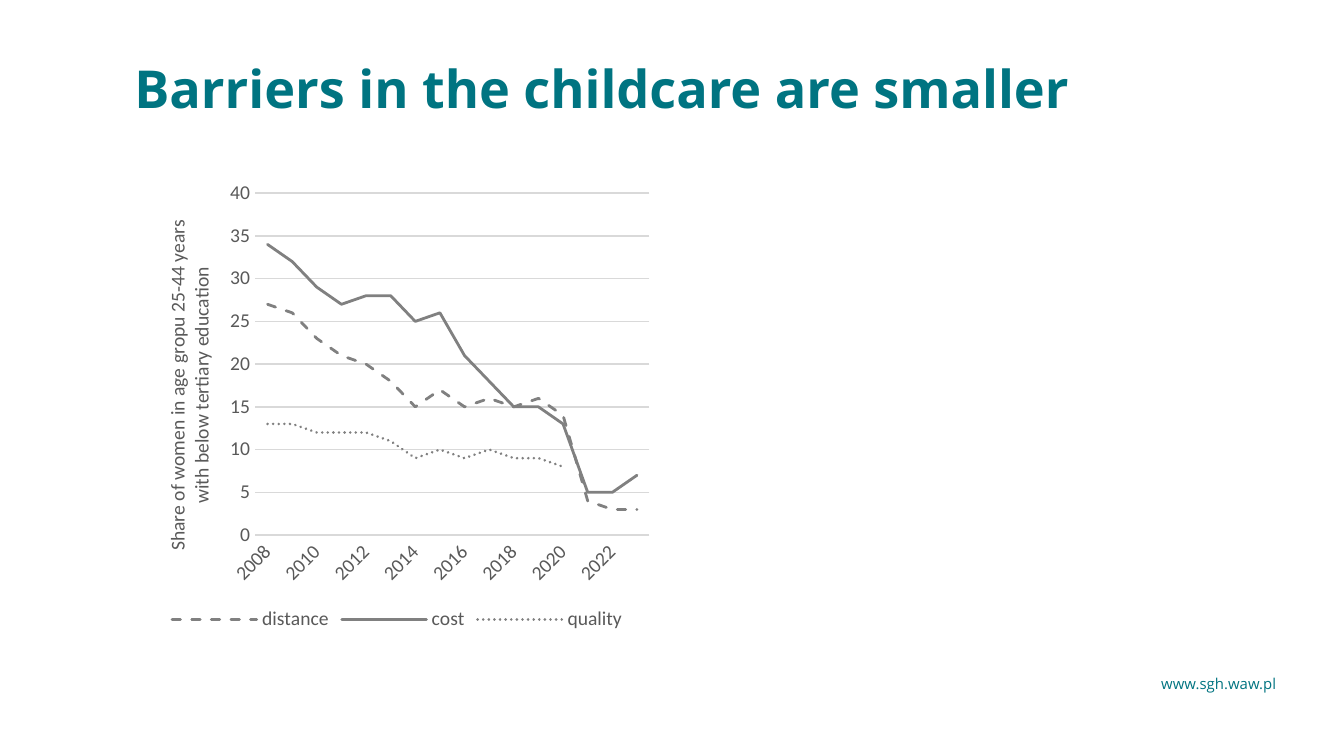
from lxml import etree
from pptx import Presentation
from pptx import util as u
from pptx.chart import data
from pptx.dml import color
from pptx.enum import chart as charts, dml
from pptx.oxml import ns

COLORS = {"teal": "007481", "label": "595959", "grid": "D9D9D9", "series": "808080"}


def rgb(name):
    return color.RGBColor.from_string(COLORS[name])


def format_font(font, face, size, shade, bold=False):
    font.name = face
    font.size = u.Pt(size)
    font.bold = bold
    font.color.rgb = rgb(shade)


def write(frame, words, face="Open Sans", size=8, shade="teal", bold=False):
    frame.text = words
    format_font(frame.paragraphs[0].runs[0].font, face, size, shade, bold)


def place(parent, before, target=None, **fractions):
    for old in parent.findall(ns.qn("c:layout")):
        parent.remove(old)
    layout = etree.Element(ns.qn("c:layout"))
    manual = etree.SubElement(layout, ns.qn("c:manualLayout"))
    settings = {"layoutTarget": target} if target else {}
    settings.update(xMode="edge", yMode="edge", **fractions)
    for tag, value in settings.items():
        etree.SubElement(manual, ns.qn(f"c:{tag}")).set("val", str(value))
    if before:
        parent.find(ns.qn(before)).addnext(layout)
    else:
        parent.insert(0, layout)


class Deck:
    face = "Calibri"
    label_size = 10.5

    def __init__(self, width, height):
        self.show = Presentation()
        self.show.slide_width = u.Inches(width)
        self.show.slide_height = u.Inches(height)
        self.slide = self.show.slides.add_slide(self.show.slide_layouts[6])

    def label(self, words, box, wrap=True, **style):
        frame = self.slide.shapes.add_textbox(*map(u.Inches, box)).text_frame
        frame.margin_left = frame.margin_right = frame.margin_top = frame.margin_bottom = 0
        frame.word_wrap = wrap
        write(frame, words, **style)

    def axis(self, axis):
        axis.major_tick_mark = axis.minor_tick_mark = charts.XL_TICK_MARK.NONE
        format_font(axis.tick_labels.font, self.face, self.label_size, "label")

    def line_chart(self, box, years, barriers, dashes, axis_title):
        figures = data.CategoryChartData(number_format="0")
        figures.categories = years
        for barrier, shares in barriers.items():
            figures.add_series(barrier, shares)
        chart = self.slide.shapes.add_chart(
            charts.XL_CHART_TYPE.LINE, *map(u.Inches, box), figures).chart
        chart.has_title = False
        chart.font.name = self.face
        chart.font.size = u.Pt(self.label_size)
        plot = chart.plots[0]
        plot.vary_by_categories = False
        for series in plot.series:
            series.smooth = False
            series.marker.style = charts.XL_MARKER_STYLE.NONE
            series.format.line.color.rgb = rgb("series")
            series.format.line.width = u.Pt(1.5)
            series.format.line.dash_style = dashes[series.name]
            series._element.find(".//" + ns.qn("a:ln")).set("cap", "rnd")

        year_axis, share_axis = chart.category_axis, chart.value_axis
        for axis in (year_axis, share_axis):
            self.axis(axis)
        for line in (year_axis.format.line, share_axis.major_gridlines.format.line):
            line.color.rgb = rgb("grid")
            line.width = u.Pt(0.75)
        share_axis.format.line.fill.background()
        share_axis.minimum_scale, share_axis.maximum_scale = 0, 40
        share_axis.major_unit = 5
        share_axis.tick_labels.number_format = "0"
        share_axis.tick_labels.number_format_is_linked = False
        year_labels = year_axis._element.find(ns.qn("c:txPr")).find(ns.qn("a:bodyPr"))
        year_labels.set("rot", "-2700000")
        skip = etree.Element(ns.qn("c:tickLblSkip"))
        skip.set("val", "2")
        year_axis._element.find(ns.qn("c:noMultiLvlLbl")).addprevious(skip)

        title = share_axis.axis_title
        write(title.text_frame, axis_title, self.face, self.label_size, "label")
        turned = title._element.find(".//" + ns.qn("a:bodyPr"))
        turned.set("rot", "-5400000")
        turned.set("vert", "horz")
        place(title._element, "c:tx", x=0.05, y=0.09)
        place(plot._element.getparent(), None, "inner", x=0.23, y=0.04, w=0.75, h=0.74)

        chart.has_legend = True
        chart.legend.position = charts.XL_LEGEND_POSITION.BOTTOM
        chart.legend.include_in_layout = False
        format_font(chart.legend.font, self.face, self.label_size, "label")


def main():
    width = 10
    deck = Deck(width, width * 9 / 16)
    deck.label("www.sgh.waw.pl", (8.64, 5.02, 0.87, 0.13), wrap=False)
    deck.label("Barriers in the childcare are smaller", (1, 0.42, 8.5, 0.74),
               size=28, bold=True)
    deck.line_chart(
        (1, 1.3, 3.91, 3.44),
        [str(year) for year in range(2008, 2024)],
        {
            "distance": [27, 26, 23, 21, 20, 18, 15, 17, 15, 16, 15, 16, 14, 4, 3, 3],
            "cost": [34, 32, 29, 27, 28, 28, 25, 26, 21, 18, 15, 15, 13, 5, 5, 7],
            "quality": [13, 13, 12, 12, 12, 11, 9, 10, 9, 10, 9, 9, 8, None, None, None],
        },
        {
            "distance": dml.MSO_LINE.DASH,
            "cost": dml.MSO_LINE.SOLID,
            "quality": dml.MSO_LINE.ROUND_DOT,
        },
        "Share of women in age gropu 25-44 years with below tertiary education",
    )
    deck.show.save("out.pptx")


if __name__ == "__main__":
    main()
